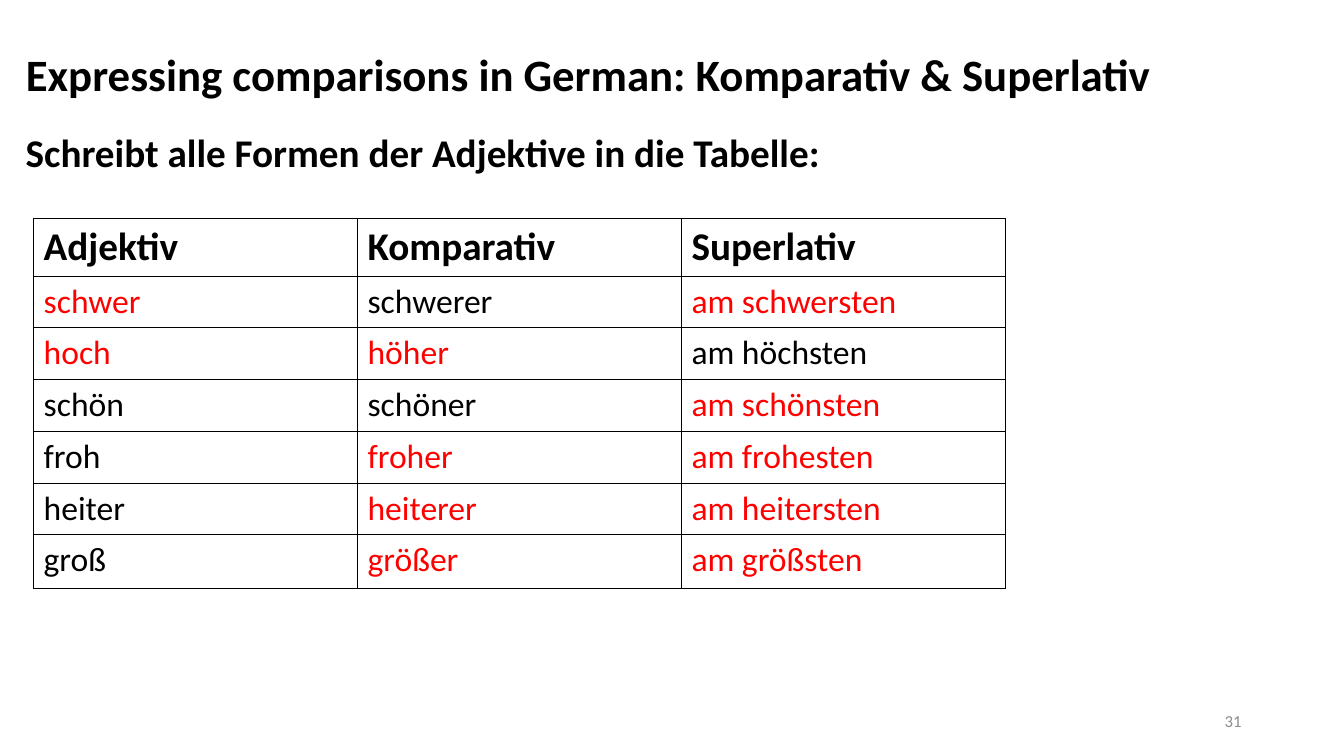
from dataclasses import dataclass

from lxml.etree import SubElement
from pptx import Presentation
from pptx.dml.color import RGBColor as Color
from pptx.enum.text import MSO_ANCHOR as Anchor, MSO_AUTO_SIZE as AutoSize, PP_ALIGN as Align
from pptx.oxml.ns import qn
from pptx.util import Emu, Pt

# Content
TITLE = "Expressing comparisons in German: Komparativ & Superlativ"
TASK = "Schreibt alle Formen der Adjektive in die Tabelle:"
PAGE_NUMBER = "31"
HEADINGS = ("Adjektiv", "Komparativ", "Superlativ")
# Three forms, then the columns that were given; the others are answers
ADJECTIVES = [
    (("schwer", "schwerer", "am schwersten"), {1}),
    (("hoch", "höher", "am höchsten"), {2}),
    (("schön", "schöner", "am schönsten"), {0, 1}),
    (("froh", "froher", "am frohesten"), {0}),
    (("heiter", "heiterer", "am heitersten"), {0}),
    (("groß", "größer", "am größsten"), {0}),
]


@dataclass(frozen=True)
class Theme:
    font: str = "Calibri"
    ink: str = "000000"
    answer: str = "FF0000"
    muted: str = "8C8C8C"
    title: int = 32
    heading: int = 28
    body: int = 24
    small: int = 12


THEME = Theme()

# Layout in px, 96 to the inch
PAGE_SIZE = (1280, 720)
TITLE_BOX = (15, 23, 1103, 100)
TASK_BOX = (15, 123, 1241, 580)
NUMBER_BOX = (904, 667, 288, 38)
TABLE_LEFT, TABLE_TOP, COLUMN_WIDTH = 32, 208, 308.5
ROW_HEIGHTS = (55, 49, 49, 50, 49, 49, 51)


def px(length):
    return Emu(round(length * 9525))


def write(frame, text, size=THEME.body, color=THEME.ink, bold=False,
          align=Align.LEFT, spacing=1.0):
    para = frame.paragraphs[0]
    para.alignment = align
    para.line_spacing = spacing
    span = para.add_run()
    span.text = text
    span.font.name = THEME.font
    span.font.size = Pt(size)
    span.font.bold = bold
    span.font.color.rgb = Color.from_string(color)


def set_frame(shape, bounds, anchor):
    shape.left, shape.top, shape.width, shape.height = map(px, bounds)
    frame = shape.text_frame
    frame.word_wrap = True
    frame.auto_size = AutoSize.NONE
    frame.vertical_anchor = anchor
    return frame


def add_text(page, bounds, text, anchor=Anchor.TOP, **style):
    box = page.shapes.add_textbox(*map(px, bounds))
    write(set_frame(box, bounds, anchor), text, **style)


def add_borders(cell):
    properties = cell._tc.get_or_add_tcPr()
    for index, side in enumerate(("lnL", "lnR", "lnT", "lnB")):
        line = properties.makeelement(qn(f"a:{side}"), {"w": str(Pt(1))})
        fill = SubElement(line, qn("a:solidFill"))
        SubElement(fill, qn("a:srgbClr"), val=THEME.ink)
        properties.insert(index, line)


def add_forms_table(page):
    rows = [[(text, THEME.ink) for text in HEADINGS]]
    for forms, given in ADJECTIVES:
        rows.append([(text, THEME.ink if column in given else THEME.answer)
                     for column, text in enumerate(forms)])
    bounds = (TABLE_LEFT, TABLE_TOP, COLUMN_WIDTH * len(HEADINGS), sum(ROW_HEIGHTS))
    table = page.shapes.add_table(len(rows), len(HEADINGS), *map(px, bounds)).table
    table.first_row = table.horz_banding = False
    for column in table.columns:
        column.width = px(COLUMN_WIDTH)
    for r, (row, height) in enumerate(zip(rows, ROW_HEIGHTS)):
        table.rows[r].height = px(height)
        heading = r == 0
        for c, (text, color) in enumerate(row):
            cell = table.cell(r, c)
            cell.fill.background()
            add_borders(cell)
            write(cell.text_frame, text, color=color, bold=heading,
                  size=THEME.heading if heading else THEME.body)


def main():
    deck = Presentation()
    deck.slide_width, deck.slide_height = map(px, PAGE_SIZE)
    page = deck.slides.add_slide(deck.slide_layouts.get_by_name("Title Only"))

    # Title and task
    write(set_frame(page.shapes.title, TITLE_BOX, Anchor.MIDDLE), TITLE,
          size=THEME.title, bold=True, spacing=0.9)
    add_text(page, TASK_BOX, TASK, size=THEME.heading, bold=True, spacing=0.9)

    # Adjective forms
    add_forms_table(page)

    # Page number
    add_text(page, NUMBER_BOX, PAGE_NUMBER, anchor=Anchor.MIDDLE,
             size=THEME.small, color=THEME.muted, align=Align.RIGHT)

    deck.save("out.pptx")


if __name__ == "__main__":
    main()
